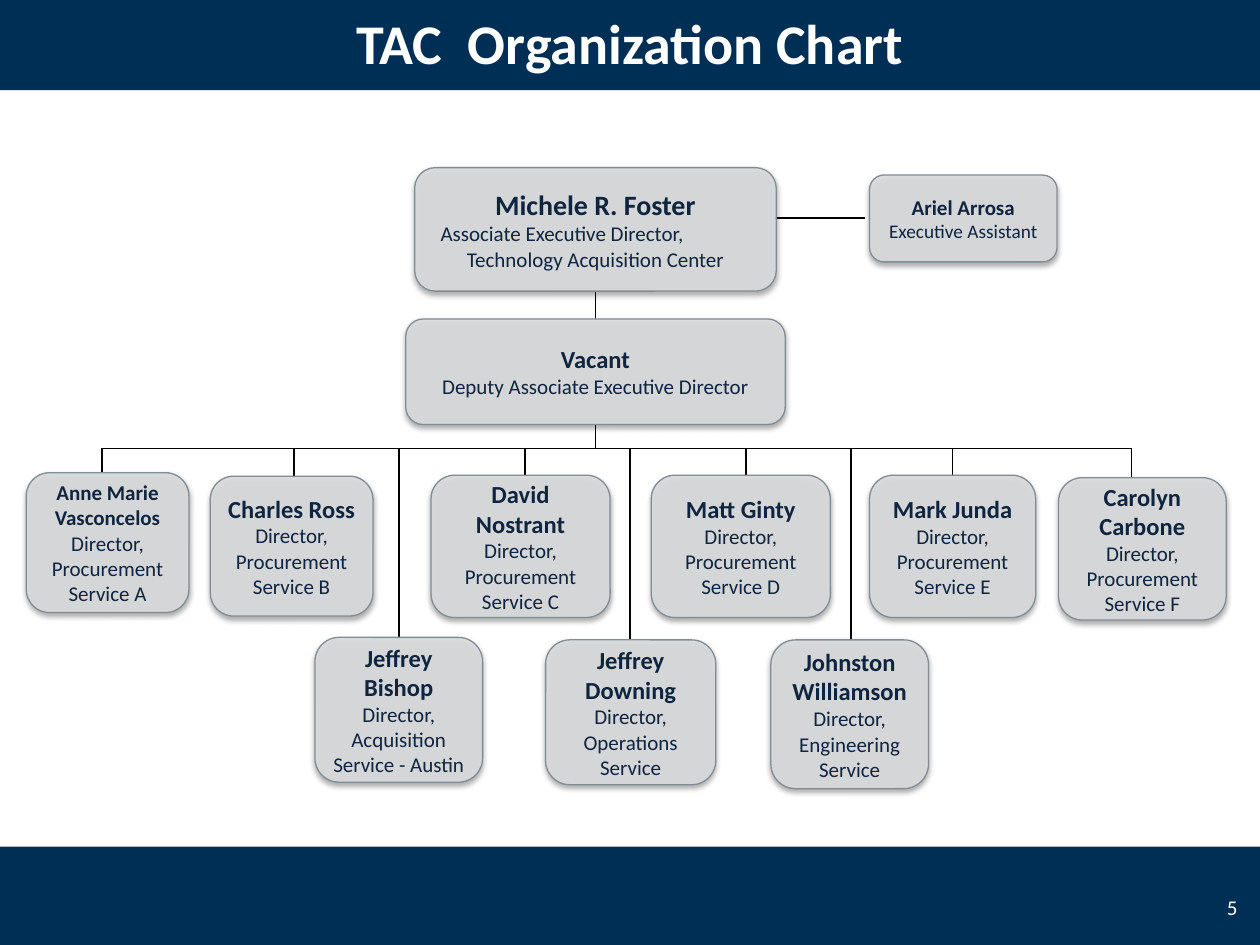
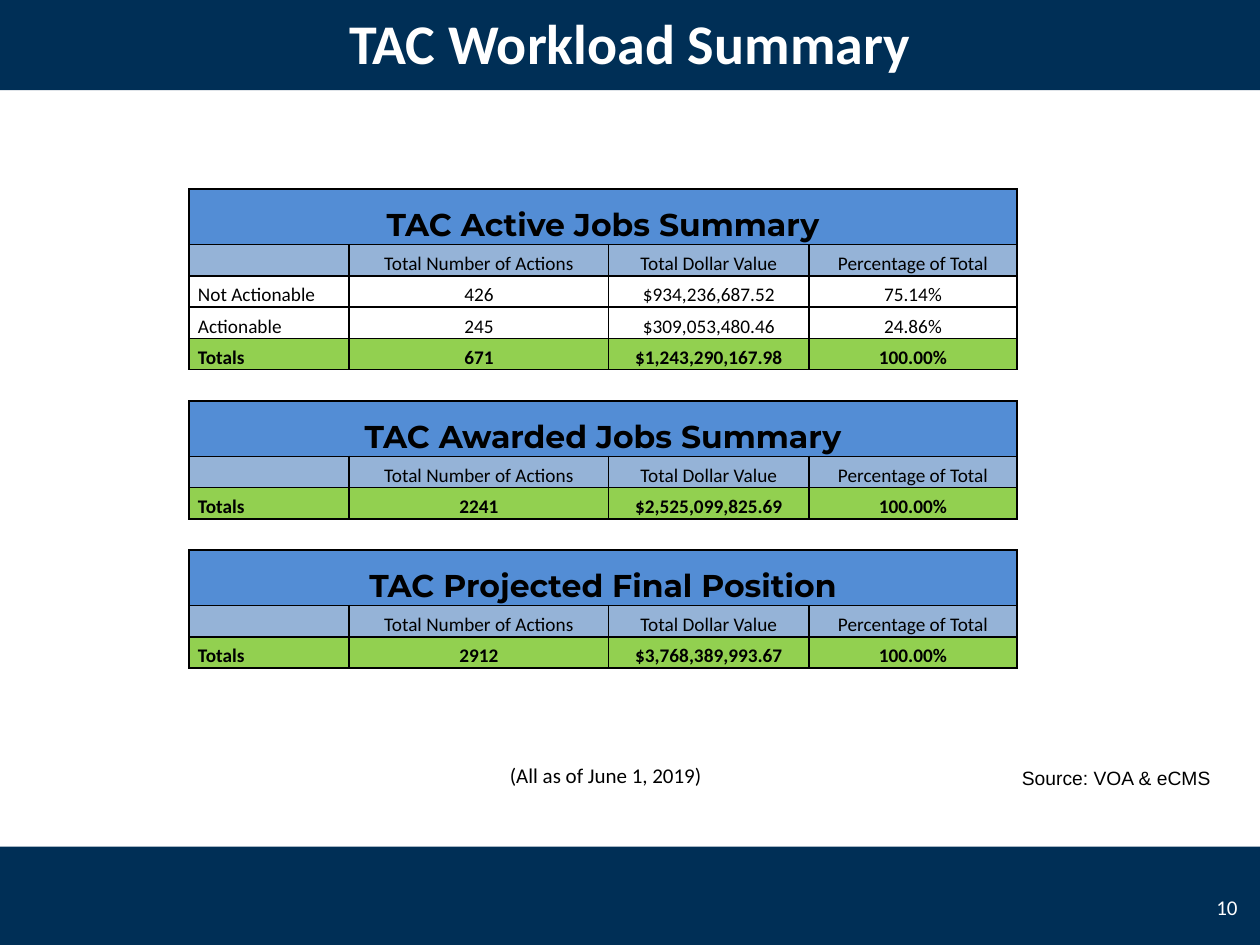
from collections import namedtuple

from lxml.etree import SubElement as sub
from pptx import Presentation
from pptx.dml.color import RGBColor as Rgb
from pptx.enum.shapes import MSO_CONNECTOR as Link, MSO_SHAPE as Shape
from pptx.enum.text import MSO_ANCHOR as Anchor, MSO_AUTO_SIZE as Fit, PP_ALIGN as Align
from pptx.oxml.ns import qn
from pptx.util import Cm, Pt

Box = namedtuple("Box", "left top width height")
Person = namedtuple("Person", "name role box sizes drop", defaults=((14, 12), None))

COLORS = {
    "navy": "002F56", "white": "FFFFFF", "black": "000000",
    "card": "D9DBDD", "card_line": "808D94", "card_text": "0F243E",
    "heading": "538DD5", "columns": "95B3D7", "totals": "92D050",
}
WIDTH, HEIGHT = 25.4, 19.05
BANDS = (Box(0, 0, WIDTH, 1.82), Box(0, 17.07, WIDTH, HEIGHT - 17.07))
TITLE_BOX = Box(0, -0.2, WIDTH, 2.1)
NUMBER_BOX = Box(24.13, 17.78, 1.07, 1.02)

CHART_BOX = Box(0.53, 3.38, 24.18, 12.52)
BUS_TOP = 5.66
CHIEF = Person("Michele R. Foster",
               "Associate Executive Director,\nTechnology Acquisition Center",
               Box(7.83, 0, 7.29, 2.49), (16, 12))
CHIEF_INDENTS = (0.2, 0.73)
DEPUTY = Person("Vacant", "Deputy Associate Executive Director", Box(7.65, 3.05, 7.65, 2.13))
ASSISTANT = Person("Ariel Arrosa", "Executive Assistant", Box(17, 0.15, 3.78, 1.75), (12, 11))
ASSISTANT_LINE = Box(15.1, 1.01, 1.8, 0)
DIRECTORS = (
    Person("Anne Marie Vasconcelos", "Director, Procurement Service A",
           Box(0, 6.15, 3.28, 2.82), (12, 12), 1.53),
    Person("Charles Ross", "Director, Procurement Service B",
           Box(3.71, 6.22, 3.28, 2.82), drop=5.39),
    Person("David Nostrant", "Director, Procurement Service C",
           Box(8.16, 6.2, 3.61, 2.87), drop=10.06),
    Person("Matt Ginty", "Director, Procurement Service D",
           Box(12.6, 6.2, 3.61, 2.87), drop=14.51),
    Person("Mark Junda", "Director, Procurement Service E",
           Box(17, 6.2, 3.35, 2.87), drop=18.67),
    Person("Carolyn Carbone", "Director, Procurement Service F",
           Box(20.81, 6.25, 3.38, 2.87), drop=22.28),
    Person("Jeffrey Bishop", "Director, Acquisition Service - Austin",
           Box(5.82, 9.47, 3.38, 2.92), drop=7.52),
    Person("Jeffrey Downing", "Director, Operations Service",
           Box(10.47, 9.52, 3.43, 2.92), drop=12.17),
    Person("Johnston Williamson", "Director, Engineering Service",
           Box(15.01, 9.52, 3.18, 3), drop=16.62),
)

TABLE_BOX = Box(3.81, 3.81, 16.69, 9.66)
COLUMN_WIDTHS = (3.23, 5.23, 4.04, 4.19)
HEADING_HEIGHT, ROW_HEIGHT = 1.12, 0.63
COLUMN_NAMES = ("", "Total Number of Actions", "Total Dollar Value", "Percentage of Total")
SUMMARIES = (
    ("TAC Active Jobs Summary", (
        ("Not Actionable", "426", "$934,236,687.52", "75.14%"),
        ("Actionable", "245", "$309,053,480.46", "24.86%"),
        ("Totals", "671", "$1,243,290,167.98", "100.00%"))),
    ("TAC Awarded Jobs Summary", (("Totals", "2241", "$2,525,099,825.69", "100.00%"),)),
    ("TAC Projected Final Position", (("Totals", "2912", "$3,768,389,993.67", "100.00%"),)),
)


def color(name):
    return Rgb.from_string(COLORS[name])


def lengths(box):
    return [Cm(value) for value in box]


def inside(area, box):
    return Box(area.left + box.left, area.top + box.top, box.width, box.height)


def style(para, size, ink, bold=False, font="Calibri", align=None):
    para.alignment = align
    for span in para.runs:
        span.font.name, span.font.size, span.font.bold = font, Pt(size), bold
        span.font.color.rgb = color(ink)


def add_text(page, box, text, size, ink, font="Calibri", align=None,
             anchor=Anchor.TOP, wrap=True, fit=Fit.NONE):
    frame = page.shapes.add_textbox(*lengths(box)).text_frame
    frame.text = text
    frame.word_wrap, frame.auto_size, frame.vertical_anchor = wrap, fit, anchor
    style(frame.paragraphs[0], size, ink, font=font, align=align)


def add_bands(page, layout):
    for holder in list(layout.placeholders)[1:]:
        holder.element.getparent().remove(holder.element)
    for box in BANDS:
        band = page.shapes.add_shape(Shape.RECTANGLE, *lengths(box))
        band.shadow.inherit = False
        band.fill.solid()
        band.fill.fore_color.rgb = color("navy")
        band.line.fill.background()
        layout.shapes.element.append(band.element)


def add_frame(page, title, number):
    holder = page.shapes.title
    holder.left, holder.top, holder.width, holder.height = lengths(TITLE_BOX)
    frame = holder.text_frame
    frame.text = title
    frame.auto_size, frame.vertical_anchor = Fit.NONE, Anchor.MIDDLE
    style(frame.paragraphs[0], 32, "white", True, align=Align.CENTER)
    add_text(page, NUMBER_BOX, number, 12, "white", align=Align.RIGHT, anchor=Anchor.MIDDLE)


def add_line(page, area, box):
    left, top, width, height = inside(area, box)
    line = page.shapes.add_connector(
        Link.STRAIGHT, Cm(left), Cm(top), Cm(left + width), Cm(top + height))
    line.line.color.rgb = color("black")
    line.line.width = Pt(1)
    sub(line.element.spPr, qn("a:effectLst"))


def add_card(page, area, person):
    card = page.shapes.add_shape(Shape.ROUNDED_RECTANGLE, *lengths(inside(area, person.box)))
    card.fill.solid()
    card.fill.fore_color.rgb = color("card")
    fill = card.element.spPr.find(qn("a:solidFill"))
    sub(fill[0], qn("a:alpha"), val="90000")
    card.line.color.rgb = color("card_line")
    card.line.width = Pt(0.75)
    card.shadow.inherit = False
    effects = card.element.spPr.find(qn("a:effectLst"))
    shadow = sub(effects, qn("a:outerShdw"), blurRad=str(Pt(3.1)), dist=str(Pt(1.8)),
                 dir="5400000", rotWithShape="0")
    sub(sub(shadow, qn("a:srgbClr"), val=COLORS["black"]), qn("a:alpha"), val="35000")

    frame = card.text_frame
    frame.text = f"{person.name}\n{person.role}"
    frame.word_wrap, frame.vertical_anchor = True, Anchor.MIDDLE
    frame.margin_left = frame.margin_right = frame.margin_top = frame.margin_bottom = Cm(0.2)
    name_size, role_size = person.sizes
    name, *roles = frame.paragraphs
    style(name, name_size, "card_text", True, align=Align.CENTER)
    for para in roles:
        style(para, role_size, "card_text", align=Align.CENTER)
    return roles


def add_org_chart(page, area):
    center = DEPUTY.box.left + DEPUTY.box.width / 2
    for upper, lower_top in ((CHIEF, DEPUTY.box.top), (DEPUTY, BUS_TOP)):
        bottom = upper.box.top + upper.box.height
        add_line(page, area, Box(center, bottom, 0, lower_top - bottom))
    add_line(page, area, ASSISTANT_LINE)
    drops = [person.drop for person in DIRECTORS]
    add_line(page, area, Box(min(drops), BUS_TOP, max(drops) - min(drops), 0))
    for person in DIRECTORS:
        add_line(page, area, Box(person.drop, BUS_TOP, 0, person.box.top - BUS_TOP))
    for person in (DEPUTY, ASSISTANT, *DIRECTORS):
        add_card(page, area, person)
    for para, indent in zip(add_card(page, area, CHIEF), CHIEF_INDENTS):
        para.alignment = Align.LEFT
        para._p.get_or_add_pPr().set("marL", str(Cm(indent)))


def format_cell(cell, text, fill=None, size=11, bold=False, font="Calibri",
                align=Align.CENTER, sides="LRTB"):
    cell.text = text
    cell.vertical_anchor = Anchor.BOTTOM
    cell.margin_left = cell.margin_right = Cm(0.18)
    cell.margin_top = cell.margin_bottom = 0
    para = cell.text_frame.paragraphs[0]
    style(para, size, "black", bold, font, align)
    if not text:
        sub(para._p, qn("a:endParaRPr"), sz=str(size * 100))
    for side in "LRTB":
        border = sub(cell._tc.get_or_add_tcPr(), qn(f"a:ln{side}"), w=str(Pt(1)))
        if side in sides:
            sub(sub(border, qn("a:solidFill")), qn("a:srgbClr"), val=COLORS["black"])
        else:
            sub(border, qn("a:noFill"))
    if fill:
        cell.fill.solid()
        cell.fill.fore_color.rgb = color(fill)
    else:
        cell.fill.background()


def summary_rows():
    for index, (heading, records) in enumerate(SUMMARIES):
        if index:
            yield "spacer", ("",) * 4
        yield "heading", (heading, "", "", "")
        yield "columns", COLUMN_NAMES
        for record in records:
            yield ("totals" if record[0] == "Totals" else "record"), record


def add_summary_table(page, area):
    rows = list(summary_rows())
    table = page.shapes.add_table(len(rows), len(COLUMN_WIDTHS), *lengths(area)).table
    table.first_row = table.horz_banding = False
    for column, width in zip(table.columns, COLUMN_WIDTHS):
        column.width = Cm(width)
    for index, (kind, values) in enumerate(rows):
        heading = kind == "heading"
        table.rows[index].height = Cm(HEADING_HEIGHT if heading else ROW_HEIGHT)
        for place, value in enumerate(values):
            format_cell(
                table.cell(index, place), value,
                fill=kind if kind in COLORS else None,
                size=18 if heading else 11,
                bold=heading or kind == "totals",
                font="Montserrat" if heading else "Calibri",
                align=Align.CENTER if heading or place else Align.LEFT,
                sides="TB" if kind == "spacer" else "LRTB")
        if heading:
            table.cell(index, 0).merge(table.cell(index, len(values) - 1))


def build_organization(page):
    add_frame(page, "TAC  Organization Chart", "5")
    add_org_chart(page, CHART_BOX)


def build_workload(page):
    add_frame(page, "TAC Workload Summary", "10")
    add_summary_table(page, TABLE_BOX)
    add_text(page, Box(20.35, 15.32, 4.37, 0.74), "Source: VOA & eCMS", 11, "black",
             font="Arial", wrap=False, fit=Fit.SHAPE_TO_FIT_TEXT)
    add_text(page, Box(10.03, 15.24, 4.72, 0.76), "(All as of June 1, 2019)", 12, "black",
             fit=Fit.SHAPE_TO_FIT_TEXT)


def main():
    deck = Presentation()
    deck.slide_width, deck.slide_height = Cm(WIDTH), Cm(HEIGHT)
    layout = deck.slide_layouts.get_by_name("Title Only")
    pages = [deck.slides.add_slide(layout) for _ in range(2)]
    add_bands(pages[0], layout)
    build_organization(pages[0])
    build_workload(pages[1])
    deck.save("out.pptx")


if __name__ == "__main__":
    main()
